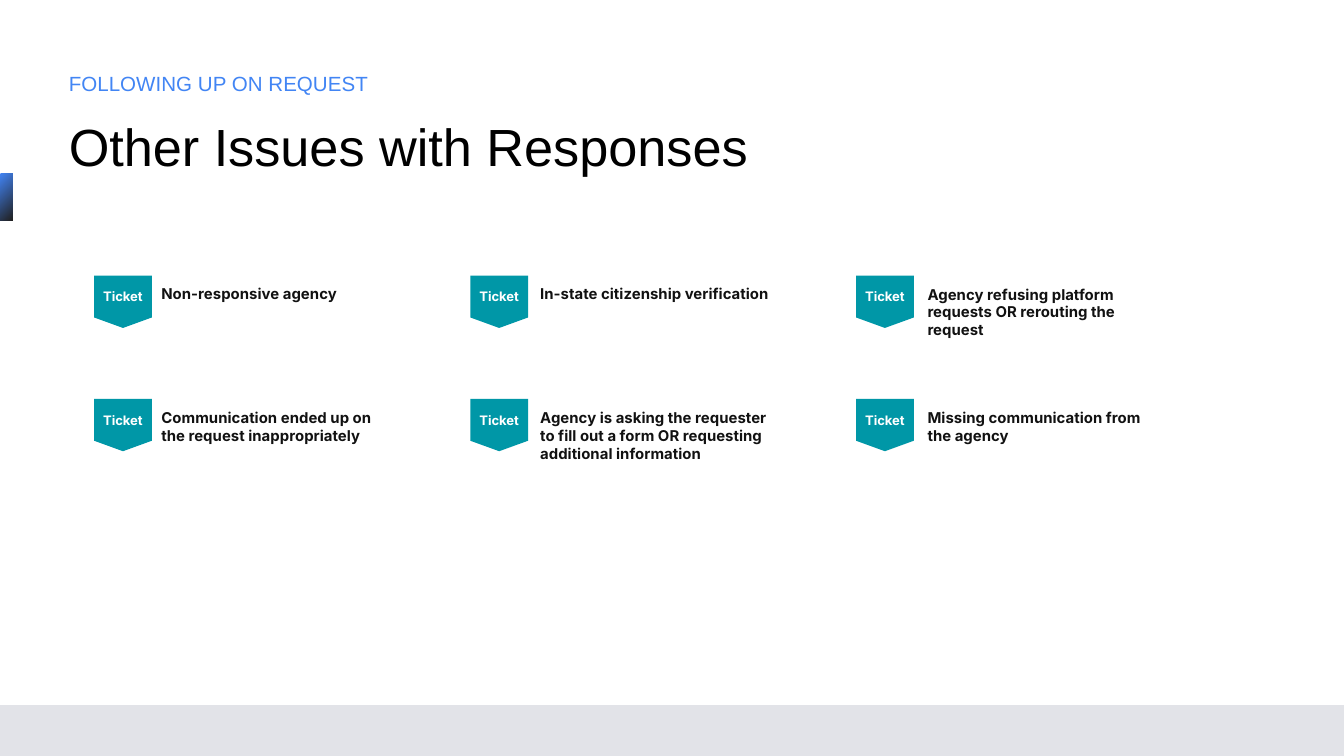
"""Build the slide on other issues with responses."""
from lxml import etree
from pptx import Presentation
from pptx.dml.color import RGBColor
from pptx.enum.shapes import MSO_SHAPE
from pptx.enum.text import MSO_ANCHOR, MSO_AUTO_SIZE, PP_ALIGN
from pptx.oxml.ns import qn
from pptx.util import Cm, Pt

RECTANGLE = MSO_SHAPE.RECTANGLE
TAG = MSO_SHAPE.FLOWCHART_OFFPAGE_CONNECTOR
TOP, MIDDLE = MSO_ANCHOR.TOP, MSO_ANCHOR.MIDDLE
LEFT, CENTER = PP_ALIGN.LEFT, PP_ALIGN.CENTER
NO_FIT, GROW = MSO_AUTO_SIZE.NONE, MSO_AUTO_SIZE.SHAPE_TO_FIT_TEXT

WHITE = RGBColor(0xFF, 0xFF, 0xFF)
BLACK = RGBColor(0x00, 0x00, 0x00)
INK = RGBColor(0x11, 0x11, 0x11)
CHARCOAL = RGBColor(0x21, 0x21, 0x21)
BLUE = RGBColor(0x42, 0x85, 0xF4)
TEAL = RGBColor(0x00, 0x97, 0xA7)
GREY = RGBColor(0xD6, 0xD8, 0xDF)

SLIDE_WIDTH, SLIDE_HEIGHT = 25.4, 14.29
FOOTER_HEIGHT = 0.96
TAG_LEFTS = (1.78, 8.89, 16.18)
LABEL_LEFTS = (2.87, 10.03, 17.35)
ROW_TOPS = (5.21, 7.54)
ISSUES = (
    (
        ("Non-responsive agency", 1),
        ("In-state citizenship verification", 1),
        ("Agency refusing platform requests OR rerouting the request", 3),
    ),
    (
        ("Communication ended up on the request inappropriately", 2),
        ("Agency is asking the requester to fill out a form OR requesting "
         "additional information", 3),
        ("Missing communication from the agency", 2),
    ),
)


def add_plain_shape(slide, kind, box, color):
    """Add a preset shape with a solid fill, no line and no shadow."""
    shape = slide.shapes.add_shape(kind, *map(Cm, box))
    shape.shadow.inherit = False
    shape.fill.solid()
    shape.fill.fore_color.rgb = color
    shape.line.fill.background()
    return shape


def add_veil(slide, box, color):
    """Add a rectangle that is 70 percent opaque."""
    shape = add_plain_shape(slide, RECTANGLE, box, color)
    color_element = shape._element.spPr.find(qn("a:solidFill"))[0]
    etree.SubElement(color_element, qn("a:alpha"), val="70000")


def add_side_mark(slide):
    """Add the gradient mark on the left edge."""
    shape = add_plain_shape(slide, RECTANGLE, (0, 3.28, 0.24, 0.89), BLUE)
    shape.rotation = 180
    shape.fill.gradient()
    shape.fill.gradient_angle = 135
    for stop, color in zip(shape.fill.gradient_stops, (BLUE, CHARCOAL)):
        stop.color.rgb = color


def write_text(shape, text, font_name, size, color, bold=False,
               alignment=LEFT, anchor=TOP, inset=0, fit=NO_FIT, spacing=None):
    """Write one formatted paragraph into a shape."""
    frame = shape.text_frame
    frame.word_wrap = True
    frame.auto_size = fit
    frame.vertical_anchor = anchor
    frame.margin_left = frame.margin_right = Cm(inset)
    frame.margin_top = frame.margin_bottom = Cm(inset)
    paragraph = frame.paragraphs[0]
    paragraph.alignment = alignment
    paragraph.space_before = Pt(0)
    if spacing:
        paragraph.line_spacing = spacing
    run = paragraph.add_run()
    run.text = text
    run.font.name = font_name
    run.font.size = Pt(size)
    run.font.bold = bold
    run.font.color.rgb = color


def place_in_front(slide, placeholder, box):
    """Position a placeholder and bring it to the front."""
    placeholder.left, placeholder.top, placeholder.width, placeholder.height = map(Cm, box)
    slide.shapes._spTree.append(placeholder._element)


def add_ticket(slide, left, top):
    """Add a ticket tag."""
    shape = add_plain_shape(slide, TAG, (left, top, 1.09, 0.99), TEAL)
    write_text(shape, "Ticket", "Inter", 7, WHITE, bold=True,
               alignment=CENTER, anchor=MIDDLE, inset=0.03)


def add_label(slide, left, top, text, line_count):
    """Add the description beside a ticket tag."""
    height = 0.38 + 0.35 * line_count
    box = slide.shapes.add_textbox(Cm(left), Cm(top), Cm(4.8), Cm(height))
    write_text(box, text, "Inter", 8, INK, bold=True, inset=0.18, fit=GROW)


def main():
    """Build and save the presentation."""
    presentation = Presentation()
    presentation.slide_width = Cm(SLIDE_WIDTH)
    presentation.slide_height = Cm(SLIDE_HEIGHT)
    slide = presentation.slides.add_slide(presentation.slide_layouts[0])
    title, subtitle = slide.placeholders

    add_veil(slide, (0, 0, SLIDE_WIDTH, SLIDE_HEIGHT), WHITE)
    add_veil(slide, (0, SLIDE_HEIGHT - FOOTER_HEIGHT, SLIDE_WIDTH, FOOTER_HEIGHT), GREY)
    add_side_mark(slide)

    place_in_front(slide, subtitle, (1.3, 1.3, 7.49, 0.48))
    write_text(subtitle, "FOLLOWING UP ON REQUEST", "Arial", 11, BLUE,
               fit=GROW, spacing=1.1)

    for top, issues in zip(ROW_TOPS, ISSUES):
        for tag_left, label_left, issue in zip(TAG_LEFTS, LABEL_LEFTS, issues):
            add_ticket(slide, tag_left, top)
            add_label(slide, label_left, top, *issue)

    place_in_front(slide, title, (1.3, 2.29, 17.48, 2.31))
    write_text(title, "Other Issues with Responses", "Arial", 28, BLACK, spacing=0.9)
    presentation.save("out.pptx")


if __name__ == "__main__":
    main()
